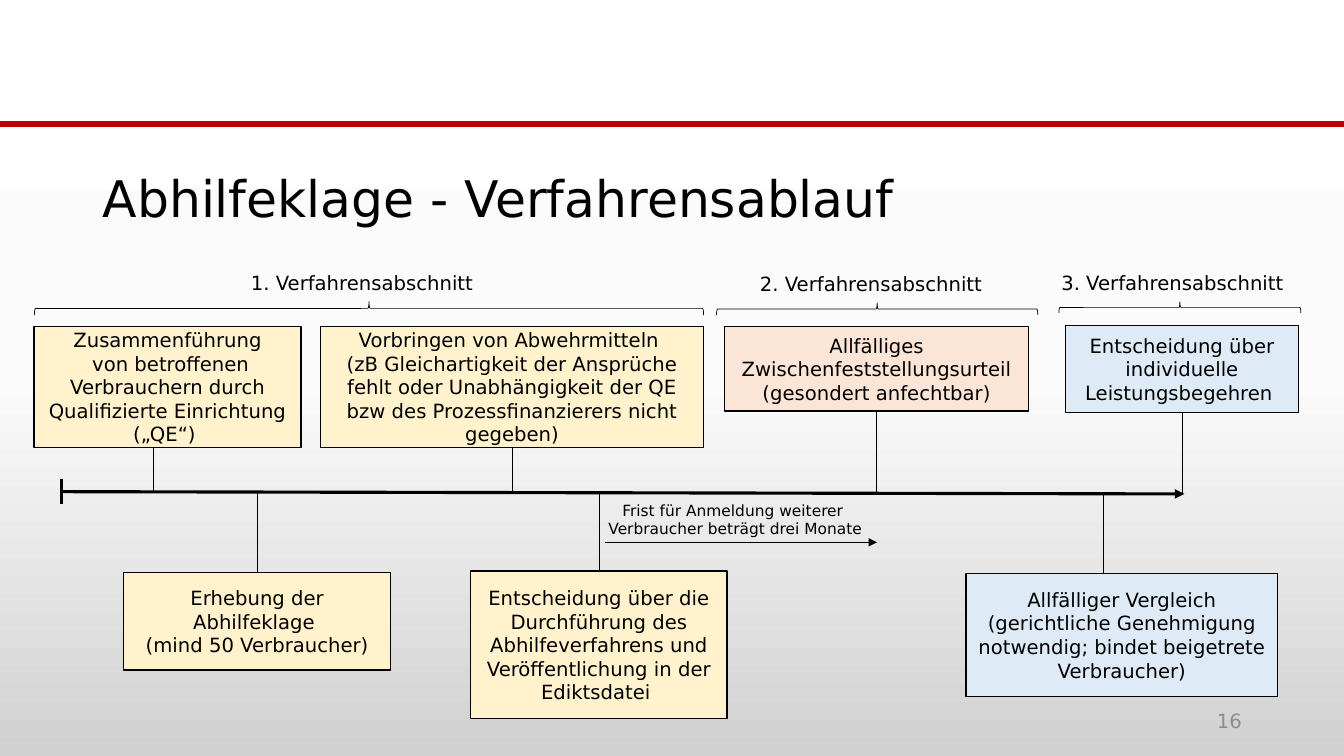
"""Build the slide on the course of proceedings of an Abhilfeklage."""
from copy import deepcopy
from dataclasses import dataclass
from typing import Optional

from pptx import Presentation
from pptx.dml.color import RGBColor
from pptx.enum.shapes import MSO_CONNECTOR as Connector, MSO_SHAPE as Preset
from pptx.enum.text import MSO_ANCHOR as Anchor, MSO_AUTO_SIZE as AutoSize, PP_ALIGN as Align
from pptx.oxml.ns import qn
from pptx.oxml.xmlchemy import OxmlElement
from pptx.util import Pt


@dataclass(frozen=True)
class Theme:
    font: str = "DejaVu Sans"
    title_size: float = 36
    body_size: float = 14
    note_size: float = 11
    ink: str = "000000"
    muted: str = "8C8C8C"
    rule: str = "C00000"
    first: str = "FFF2CC"
    second: str = "FBE5D6"
    third: str = "DEEBF7"
    background: tuple = ((0, "FFFFFF"), (0.5, "FBFBFB"), (1, "D1D1D1"))
    thin: float = 0.5
    outline: float = 1
    thick: float = 2.25
    rule_width: float = 4.5


@dataclass(frozen=True)
class Step:
    text: str
    left: float
    top: float
    width: float
    height: float
    fill: str
    stem_x: Optional[float] = None


@dataclass(frozen=True)
class Phase:
    label: str
    label_left: float
    label_top: float
    brace_left: float
    brace_top: float
    brace_width: float
    brace_height: float


THEME = Theme()
SLIDE_WIDTH, SLIDE_HEIGHT = 960, 540
AXIS_Y = 352.4
TOP, BOTTOM = 0, 2

STEPS = (
    Step("Zusammenführung\v von betroffenen Verbrauchern durch Qualifizierte Einrichtung („QE“) ",
         24.4, 233.2, 190.6, 86.4, THEME.first, 109.6),
    Step("Erhebung der Abhilfeklage \n(mind 50 Verbraucher)",
         88.4, 409, 190.6, 69.6, THEME.first),
    Step("Entscheidung über die Durchführung des Abhilfeverfahrens und "
         "Veröffentlichung in der Ediktsdatei ",
         336.2, 407.8, 183.2, 105.6, THEME.first),
    Step("Vorbringen von Abwehrmitteln \v(zB Gleichartigkeit der Ansprüche fehlt oder "
         "Unabhängigkeit der QE bzw des Prozessfinanzierers nicht gegeben)",
         228.8, 233.2, 273.8, 86.4, THEME.first),
    Step("Allfälliges Zwischenfeststellungsurteil\v(gesondert anfechtbar)",
         517.6, 233.2, 217.2, 60.4, THEME.second),
    Step("Entscheidung über individuelle Leistungsbegehren ",
         761, 232.4, 166.6, 62.2, THEME.third),
    Step("Allfälliger Vergleich (gerichtliche Genehmigung notwendig; "
         "bindet beigetrete Verbraucher)",
         690, 409.6, 222.6, 87.8, THEME.third, 788.2),
)

PHASES = (
    Phase("1. Verfahrensabschnitt", 172.1, 190.1, 24.5, 215.3, 478.1, 10),
    Phase("2. Verfahrensabschnitt", 535.7, 190.8, 511.8, 216.4, 229.5, 8.6),
    Phase("3. Verfahrensabschnitt", 751, 190.1, 756.4, 215.6, 172.8, 7.9),
)


def color(value: str) -> RGBColor:
    """Turn a hex string into a colour."""
    return RGBColor.from_string(value)


def write(shape, text: str, *, size: float = THEME.body_size, ink: str = THEME.ink,
          align=Align.LEFT, anchor=Anchor.TOP, spacing: float = 1) -> None:
    """Fill a shape with formatted, wrapped text."""
    frame = shape.text_frame
    frame.text = text
    frame.word_wrap = True
    frame.auto_size = AutoSize.NONE
    frame.vertical_anchor = anchor
    for paragraph in frame.paragraphs:
        paragraph.alignment = align
        paragraph.line_spacing = spacing
        for run in paragraph.runs:
            run.font.name = THEME.font
            run.font.size = Pt(size)
            run.font.color.rgb = color(ink)


def add_label(slide, text: str, left: float, top: float, width: float, height: float,
              **style) -> None:
    """Add a text box."""
    write(slide.shapes.add_textbox(Pt(left), Pt(top), Pt(width), Pt(height)), text, **style)


def add_line(slide, start: tuple, end: tuple, width: float = THEME.thin,
             ink: str = THEME.ink, arrow: bool = False):
    """Add a straight line, with an arrowhead at its end if wanted."""
    line = slide.shapes.add_connector(Connector.STRAIGHT, *map(Pt, start + end))
    line.line.width = Pt(width)
    line.line.color.rgb = color(ink)
    if arrow:
        head = OxmlElement("a:tailEnd")
        head.set("type", "triangle")
        line.line._get_or_add_ln().append(head)
    line._element.spPr.append(OxmlElement("a:effectLst"))
    return line


def add_preset(slide, preset, left: float, top: float, width: float, height: float,
               line_width: float, fill: Optional[str] = None):
    """Add an outlined shape without shadow."""
    shape = slide.shapes.add_shape(preset, Pt(left), Pt(top), Pt(width), Pt(height))
    shape.shadow.inherit = False
    shape.line.color.rgb = color(THEME.ink)
    shape.line.width = Pt(line_width)
    if fill:
        shape.fill.solid()
        shape.fill.fore_color.rgb = color(fill)
    else:
        shape.fill.background()
    return shape


def add_step(slide, step: Step) -> None:
    """Add a box and the stem that ties it to the time axis."""
    box = add_preset(slide, Preset.RECTANGLE, step.left, step.top, step.width, step.height,
                     THEME.outline, step.fill)
    write(box, step.text, align=Align.CENTER, anchor=Anchor.MIDDLE)
    above = step.top < AXIS_Y
    edge = step.top + step.height if above else step.top
    stem_x = step.stem_x or step.left + step.width / 2
    stem = add_line(slide, (stem_x, edge), (stem_x, AXIS_Y))
    if step.stem_x is None:
        stem.begin_connect(box, BOTTOM if above else TOP)


def add_phase(slide, phase: Phase) -> None:
    """Add a phase label and the upright brace below it."""
    add_label(slide, phase.label, phase.label_left, phase.label_top, 182.2, 24.5)
    width, height = phase.brace_width, phase.brace_height
    shift = (width - height) / 2
    brace = add_preset(slide, Preset.LEFT_BRACE, phase.brace_left + shift,
                       phase.brace_top - shift, height, width, THEME.thin)
    brace.rotation = 90


def paint_background(slide) -> None:
    """Give the slide its vertical three-stop gradient."""
    fill = slide.background.fill
    fill.gradient()
    fill.gradient_angle = 270
    stop_list = slide.element.find(".//" + qn("a:gsLst"))
    stop_list.append(deepcopy(stop_list[-1]))
    for stop, (position, value) in zip(fill.gradient_stops, THEME.background):
        stop.position = position
        stop.color.rgb = color(value)


def main() -> None:
    """Build and save the presentation."""
    presentation = Presentation()
    presentation.slide_width, presentation.slide_height = Pt(SLIDE_WIDTH), Pt(SLIDE_HEIGHT)
    slide = presentation.slides.add_slide(presentation.slide_layouts[5])
    paint_background(slide)
    add_line(slide, (0, 88.6), (SLIDE_WIDTH, 88.6), THEME.rule_width, THEME.rule)

    title = slide.shapes.title
    title.left, title.top, title.width, title.height = map(Pt, (66.2, 91.4, 828, 104.4))
    write(title, "Abhilfeklage - Verfahrensablauf", size=THEME.title_size,
          anchor=Anchor.MIDDLE, spacing=0.9)

    add_line(slide, (43.9, 351.2), (846, 352.8), THEME.thick, arrow=True)
    add_line(slide, (43.9, 342), (43.9, 360), THEME.thick)
    for step in STEPS:
        add_step(slide, step)
    for phase in PHASES:
        add_phase(slide, phase)

    add_line(slide, (432, 387.4), (626.4, 387.4), arrow=True)
    add_label(slide, "Frist für Anmeldung weiterer \vVerbraucher beträgt drei Monate",
              424.1, 354.2, 202.3, 33.8, size=THEME.note_size, align=Align.CENTER)
    add_label(slide, "16", 678.2, 500.4, 216, 28.8, ink=THEME.muted,
              align=Align.RIGHT, anchor=Anchor.MIDDLE)
    presentation.save("out.pptx")


if __name__ == "__main__":
    main()
